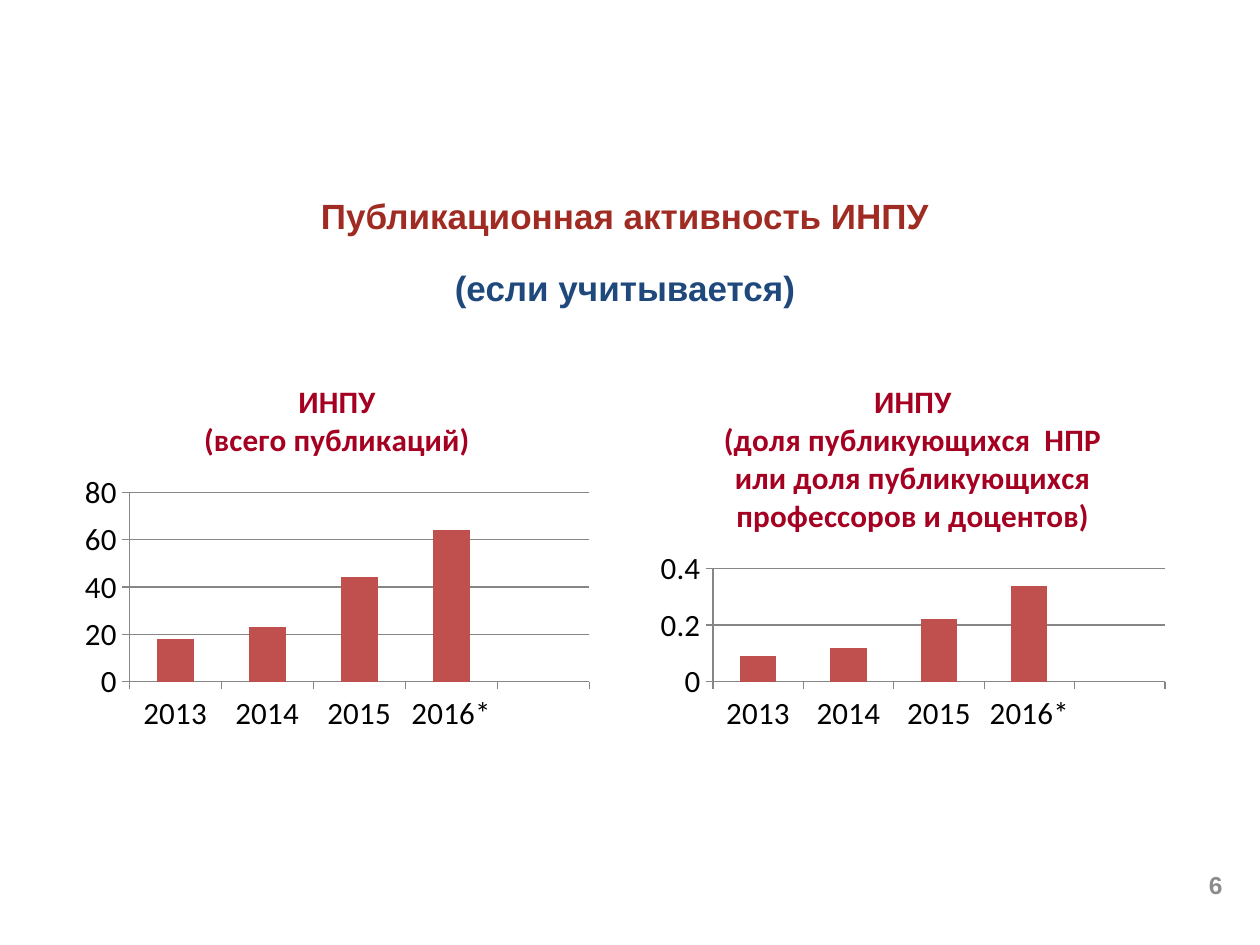
from pptx import Presentation
from pptx.chart.data import CategoryChartData
from pptx.dml.color import RGBColor
from pptx.enum.chart import XL_CHART_TYPE, XL_TICK_MARK
from pptx.enum.text import MSO_ANCHOR, MSO_AUTO_SIZE, PP_ALIGN
from pptx.util import Inches, Pt

COLUMN = XL_CHART_TYPE.COLUMN_CLUSTERED
OUTSIDE = XL_TICK_MARK.OUTSIDE
TOP, MIDDLE = MSO_ANCHOR.TOP, MSO_ANCHOR.MIDDLE
NO_FIT = MSO_AUTO_SIZE.NONE
CENTER, RIGHT = PP_ALIGN.CENTER, PP_ALIGN.RIGHT


def color(text):
    return RGBColor.from_string(text)


class Deck:
    """Hold the slide and its style, and add each kind of element."""

    head, body = "Arial", "Calibri"
    black, gray, line = "000000", "8C8C8C", "868686"
    red, blue, wine, bar = "9F2B22", "1F497D", "A50021", "C0504D"

    def __init__(self, show):
        self.slide = show.slides.add_slide(show.slide_layouts[5])

    def font(self, font, name, size, tint, bold=False):
        font.name, font.size, font.bold = name, Pt(size), bold
        font.color.rgb = color(tint)

    def place(self, shape, box):
        shape.left, shape.top, shape.width, shape.height = map(Inches, box)

    def title(self, box, lines):
        shape = self.slide.shapes.title
        self.place(shape, box)
        frame = shape.text_frame
        frame.text = "\n".join(text for text, tint in lines)
        frame.auto_size, frame.vertical_anchor = NO_FIT, TOP
        for i, (para, (text, tint)) in enumerate(zip(frame.paragraphs, lines)):
            para.alignment, para.line_spacing = CENTER, 1.5
            para.space_before = Pt(5 if i else 0)
            self.font(para.runs[0].font, self.head, 20, tint, True)

    def number(self, box, text):
        frame = self.slide.shapes.add_textbox(*map(Inches, box)).text_frame
        frame.word_wrap, frame.vertical_anchor = True, MIDDLE
        para = frame.paragraphs[0]
        para.text, para.alignment = text, RIGHT
        self.font(para.runs[0].font, self.head, 14, self.gray, True)

    def axis(self, axis):
        axis.major_tick_mark = OUTSIDE
        axis.format.line.color.rgb = color(self.line)
        self.font(axis.tick_labels.font, self.body, 17.7, self.black)

    def chart(self, box, title, years, values, top, step):
        data = CategoryChartData()
        data.categories = years
        data.add_series("Series 1", values)
        chart = self.slide.shapes.add_chart(
            COLUMN, *map(Inches, box), data).chart
        self.font(chart.font, self.body, 17.7, self.black)
        chart.has_legend = False
        chart.has_title = True
        chart.chart_title.include_in_layout = False
        frame = chart.chart_title.text_frame
        frame.text = title
        for para in frame.paragraphs:
            para.alignment = CENTER
            self.font(para.runs[0].font, self.body, 17.8, self.wine, True)
        plot = chart.plots[0]
        plot.gap_width, plot.vary_by_categories = 150, False
        fill = plot.series[0].format.fill
        fill.solid()
        fill.fore_color.rgb = color(self.bar)
        scale = chart.value_axis
        self.axis(chart.category_axis)
        self.axis(scale)
        scale.minimum_scale, scale.maximum_scale = 0, top
        scale.major_unit = step
        scale.major_gridlines.format.line.color.rgb = color(self.line)


def main():
    show = Presentation()
    show.slide_width, show.slide_height = Inches(10), Inches(7.5)
    deck = Deck(show)
    deck.title((0.67, 1.33, 8.58, 1.3), [
        ("Публикационная активность ИНПУ", deck.red),
        ("(если учитывается)", deck.blue)])
    deck.number((7.47, 6.82, 2.33, 0.4), "6")
    years = ["2013", "2014", "2015", "2016*", ""]
    charts = [
        (0.59, "ИНПУ\n(всего публикаций)", [18, 23, 44, 64, None], 80, 20),
        (5.16, "ИНПУ\n(доля публикующихся  НПР\n"
         "или доля публикующихся профессоров и доцентов)",
         [0.09, 0.12, 0.22, 0.34, None], 0.4, 0.2)]
    for left, title, values, top, step in charts:
        box = left, 2.88, 4.17, 2.99
        deck.chart(box, title, years, values, top, step)
    show.save("out.pptx")


if __name__ == "__main__":
    main()
